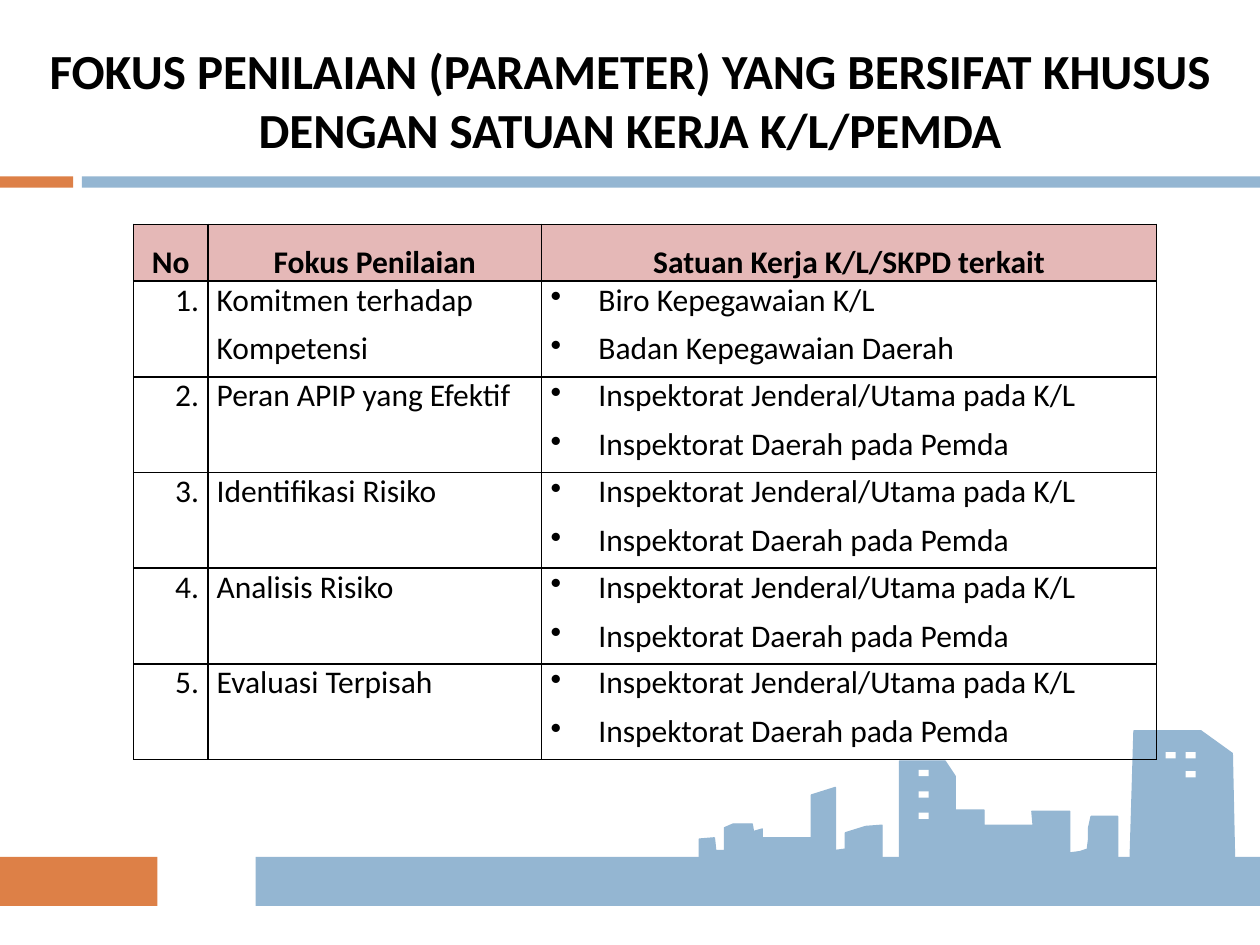
"""Build the slide on assessment focus areas and their related work units."""
import dataclasses

import lxml.etree
import pptx
import pptx.dml.color
import pptx.enum.shapes
import pptx.enum.text
import pptx.oxml.ns
import pptx.util

Inches = pptx.util.Inches
Pt = pptx.util.Pt
ALIGN = pptx.enum.text.PP_ALIGN
ANCHOR = pptx.enum.text.MSO_ANCHOR


@dataclasses.dataclass(frozen=True)
class Theme:
    """Colours, font and type sizes of the slide."""
    ink: str = "000000"
    paper: str = "FFFFFF"
    orange: str = "DD8047"
    blue: str = "94B6D2"
    pink: str = "E5B8B7"
    font: str = "Calibri"
    title_size: float = 28
    table_size: float = 18
    outline: float = 0.79
    border: float = 1


def rgb(value):
    """Turn a hex string into a colour."""
    return pptx.dml.color.RGBColor.from_string(value)


def apply(target, values):
    """Set attributes of the target from a dict."""
    for name, value in values.items():
        setattr(target, name, value)


class SlideBuilder:
    """Hold the theme and slide, and add each kind of element."""

    def __init__(self, slide, theme):
        """Keep the slide and theme."""
        self.slide = slide
        self.theme = theme

    def add_lines(self, frame, lines, size, bold=False, bullet=False, **layout):
        """Set lines as paragraphs of a text frame."""
        for index, line in enumerate(lines):
            paragraph = frame.add_paragraph() if index else frame.paragraphs[0]
            if bullet:
                properties = paragraph._p.get_or_add_pPr()
                properties.set("marL", str(Inches(0.38)))
                properties.set("indent", str(-Inches(0.38)))
                lxml.etree.SubElement(properties, pptx.oxml.ns.qn("a:buChar"), char="•")
            apply(paragraph, layout)
            if index:
                paragraph.space_before = Pt(3)
            run = paragraph.add_run()
            run.text = line
            apply(run.font, {"name": self.theme.font, "size": Pt(size), "bold": bold})
            run.font.color.rgb = rgb(self.theme.ink)

    def block(self, left, top, width, height, colour):
        """Add a plain filled rectangle."""
        shape = self.slide.shapes.add_shape(
            pptx.enum.shapes.MSO_SHAPE.RECTANGLE,
            Inches(left), Inches(top), Inches(width), Inches(height))
        shape.shadow.inherit = False
        shape.fill.solid()
        shape.fill.fore_color.rgb = rgb(colour)
        shape.line.fill.background()

    def outline(self, points, colour):
        """Add a closed filled outline."""
        start, *rest = [(Inches(x), Inches(y)) for x, y in points]
        builder = self.slide.shapes.build_freeform(*start)
        builder.add_line_segments(rest, close=True)
        shape = builder.convert_to_shape()
        shape.shadow.inherit = False
        shape.fill.solid()
        shape.fill.fore_color.rgb = rgb(colour)
        shape.line.color.rgb = rgb(colour)
        shape.line.width = Pt(self.theme.outline)

    def title(self, text, left, top, width, height):
        """Add the centred title."""
        box = self.slide.shapes.add_textbox(
            Inches(left), Inches(top), Inches(width), Inches(height))
        apply(box.text_frame, {"word_wrap": True, "vertical_anchor": ANCHOR.MIDDLE})
        self.add_lines(box.text_frame, [text], self.theme.title_size, bold=True,
                       alignment=ALIGN.CENTER)

    def cell(self, cell, lines, fill=None, **style):
        """Format, border and fill one table cell."""
        apply(cell, {"margin_left": Inches(0.07), "margin_right": Inches(0.07),
                     "margin_top": 0, "margin_bottom": 0})
        properties = cell._tc.get_or_add_tcPr()
        for side in ("lnL", "lnR", "lnT", "lnB"):
            line = lxml.etree.SubElement(properties, pptx.oxml.ns.qn(f"a:{side}"),
                                         w=str(Pt(self.theme.border)))
            solid = lxml.etree.SubElement(line, pptx.oxml.ns.qn("a:solidFill"))
            lxml.etree.SubElement(solid, pptx.oxml.ns.qn("a:srgbClr"), val=self.theme.ink)
        if fill:
            cell.fill.solid()
            cell.fill.fore_color.rgb = rgb(fill)
        else:
            cell.fill.background()
        self.add_lines(cell.text_frame, lines, self.theme.table_size, **style)

    def table(self, left, top, widths, heights, header, rows):
        """Add the table with a header and numbered body rows."""
        table = self.slide.shapes.add_table(
            len(heights), len(widths), Inches(left), Inches(top),
            Inches(sum(widths)), Inches(sum(heights))).table
        apply(table, {"first_row": False, "horz_banding": False})
        for column, width in zip(table.columns, widths):
            column.width = Inches(width)
        for row, height in zip(table.rows, heights):
            row.height = Inches(height)
        for index, heading in enumerate(header):
            self.cell(table.cell(0, index), [heading], self.theme.pink, bold=True,
                      alignment=ALIGN.CENTER, line_spacing=1.5)
        for number, (focus, units) in enumerate(rows, 1):
            focus_align = ALIGN.LEFT if len(focus) > 1 else ALIGN.JUSTIFY
            columns = (([f"{number}."], ALIGN.RIGHT, False),
                       (focus, focus_align, False),
                       (units, ALIGN.JUSTIFY, True))
            for index, (lines, alignment, bullet) in enumerate(columns):
                self.cell(table.cell(number, index), lines, bullet=bullet,
                          alignment=alignment, space_after=Pt(3))


SKYLINE = [
    (5.55, 6.85), (5.55, 6.66), (5.67, 6.65), (5.68, 6.75), (5.75, 6.75),
    (5.75, 6.57), (5.82, 6.54), (5.97, 6.54), (5.98, 6.6), (6.05, 6.58),
    (6.05, 6.65), (6.44, 6.65), (6.44, 6.31), (6.63, 6.25), (6.63, 6.75),
    (6.71, 6.74), (6.71, 6.61), (6.87, 6.56), (7, 6.55), (7, 6.82),
    (7.14, 6.83), (7.14, 6.04), (7.5, 6.04), (7.58, 6.16), (7.58, 6.43),
    (7.81, 6.43), (7.81, 6.55), (8.2, 6.55), (8.19, 6.44), (8.49, 6.44),
    (8.49, 6.77), (8.57, 6.76), (8.63, 6.74), (8.64, 6.66), (8.64, 6.57),
    (8.66, 6.48), (8.87, 6.48), (8.87, 6.81), (8.97, 6.81), (9, 5.8),
    (9.53, 5.8), (9.78, 5.98), (9.8, 6.92), (5.55, 6.94),
]
WINDOWS = [(7.29, 6.11), (7.29, 6.28), (7.29, 6.45),
           (9.25, 5.97), (9.41, 5.97), (9.41, 6.12)]
INSPECTORATES = ["Inspektorat Jenderal/Utama pada K/L", "Inspektorat Daerah pada Pemda"]
FOCUS_ROWS = [
    (["Komitmen terhadap", "Kompetensi"],
     ["Biro Kepegawaian K/L", "Badan Kepegawaian Daerah"]),
    *[([focus], INSPECTORATES) for focus in (
        "Peran APIP yang Efektif", "Identifikasi Risiko",
        "Analisis Risiko", "Evaluasi Terpisah")],
]


def main():
    """Build and save the presentation."""
    deck = pptx.Presentation()
    apply(deck, {"slide_width": Inches(10), "slide_height": Inches(7.5)})
    theme = Theme()
    page = SlideBuilder(deck.slides.add_slide(deck.slide_layouts[6]), theme)
    page.block(0, 1.4, 0.58, 0.09, theme.orange)
    page.block(0.65, 1.4, 9.35, 0.09, theme.blue)
    page.block(2.03, 6.8, 7.97, 0.39, theme.blue)
    page.block(0, 6.8, 1.25, 0.39, theme.orange)
    page.outline(SKYLINE, theme.blue)
    for left, top in WINDOWS:
        page.block(left, top, 0.08, 0.05, theme.paper)
    page.block(7.95, 6.31, 0.08, 0.08, theme.paper)
    page.title("FOKUS PENILAIAN (PARAMETER) YANG BERSIFAT KHUSUS "
               "DENGAN SATUAN KERJA K/L/PEMDA", 0, 0.25, 10, 1.08)
    page.table(1.06, 1.78, [0.59, 2.65, 4.88], [0.38] + [0.76] * len(FOCUS_ROWS),
               ["No", "Fokus Penilaian", "Satuan Kerja K/L/SKPD terkait"], FOCUS_ROWS)
    deck.save("out.pptx")


if __name__ == "__main__":
    main()
